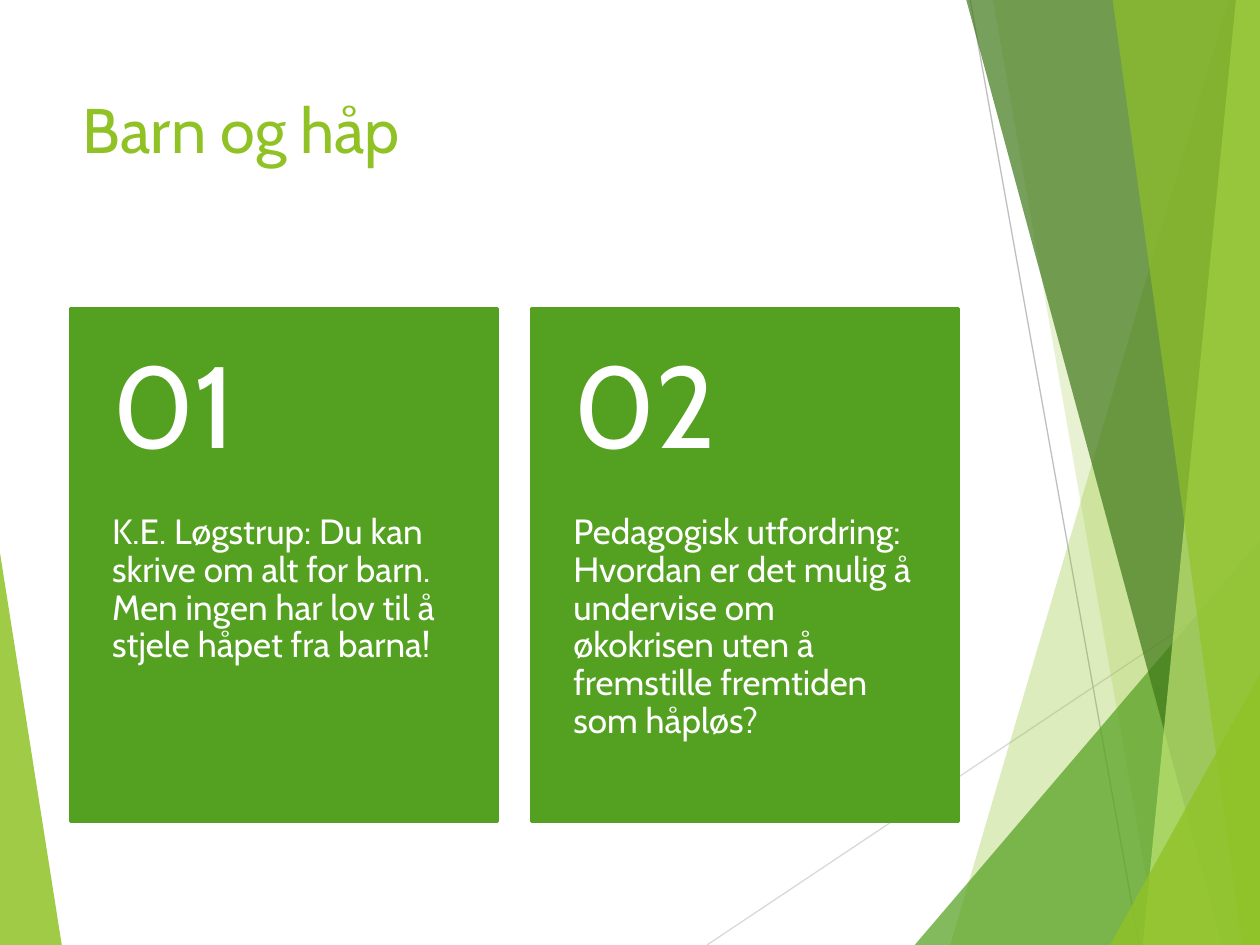
from dataclasses import dataclass

from lxml import etree
from pptx import Presentation
from pptx.dml.color import RGBColor
from pptx.enum.shapes import MSO_CONNECTOR, MSO_SHAPE
from pptx.enum.text import MSO_ANCHOR
from pptx.oxml.ns import qn
from pptx.util import Pt

STRAIGHT = MSO_CONNECTOR.STRAIGHT
RECTANGLE = MSO_SHAPE.RECTANGLE
TOP, MIDDLE = MSO_ANCHOR.TOP, MSO_ANCHOR.MIDDLE

WIDTH, HEIGHT = 720, 540
FONT = "Cabin"
LIME, GREEN, WHITE = "90C226", "54A021", "FFFFFF"

MARGIN = 40.3
CARD_TOP, CARD_WIDTH, CARD_HEIGHT = 176.4, 244.1, 293
CARD_STEP = 263.5
NUMBER_HEIGHT = 117.4
CARD_SPACING = 0.9


@dataclass
class Facet:
    points: tuple[tuple[float, float], ...]
    color: str
    opacity: int


@dataclass
class Ray:
    start: tuple[float, float]
    end: tuple[float, float]
    color: str


@dataclass
class Card:
    number: str
    message: str


@dataclass
class TextStyle:
    size: float
    color: str
    anchor: MSO_ANCHOR = TOP
    insets: tuple[float, float, float, float] = (7.2, 3.6, 7.2, 3.6)
    spacing: float = 1.0


def band(top_x: float, bottom_x: float, color: str, opacity: int) -> Facet:
    """Full-height facet from a slanted edge to the right side of the slide."""
    corners = ((top_x, 0), (bottom_x, HEIGHT), (WIDTH, HEIGHT), (WIDTH, 0))
    return Facet(corners, color, opacity)


def corner(bottom_x: float, right_y: float, color: str, opacity: int) -> Facet:
    """Triangle in the bottom right corner."""
    corners = ((bottom_x, HEIGHT), (WIDTH, right_y), (WIDTH, HEIGHT))
    return Facet(corners, color, opacity)


LEFT_FACET = Facet(((0, 316), (35.3, HEIGHT), (0, HEIGHT)), LIME, 85)
RAYS = (
    Ray((404, HEIGHT), (WIDTH, 329), "D9D9D9"),
    Ray((554.4, 0), (651, HEIGHT), "BFBFBF"),
)
RIGHT_FACETS = (
    band(702, 543, LIME, 30),
    band(567.4, 661.7, LIME, 20),
    corner(522.7, 309, GREEN, 72),
    band(552.2, 698.4, "3F7819", 70),
    band(706.3, 653, "C0E474", 70),
    band(635.8, 710, LIME, 65),
    corner(634.3, 385.2, LIME, 80),
)
CARDS = (
    Card("01", "K.E. Løgstrup: Du kan skrive om alt for barn. "
               "Men ingen har lov til å stjele håpet fra barna!"),
    Card("02", "Pedagogisk utfordring: Hvordan er det mulig å undervise om "
               "økokrisen uten å fremstille fremtiden som håpløs?"),
)
TITLE_STYLE = TextStyle(36, LIME)
NUMBER_STYLE = TextStyle(66, WHITE, MIDDLE, (23.8, 13, 23.8, 13), CARD_SPACING)
MESSAGE_STYLE = TextStyle(20, WHITE, TOP, (23.8, 0, 23.8, 26), CARD_SPACING)


def set_color(color_format, value: str) -> None:
    color_format.rgb = RGBColor.from_string(value)


def draw_facet(shapes, facet: Facet) -> None:
    first, *rest = [(Pt(x), Pt(y)) for x, y in facet.points]
    builder = shapes.build_freeform(*first)
    builder.add_line_segments(rest, close=True)
    outline = builder.convert_to_shape()
    outline.shadow.inherit = False
    outline.line.fill.background()
    outline.fill.solid()
    set_color(outline.fill.fore_color, facet.color)
    fill_color = outline.element.spPr.find(qn("a:solidFill"))[0]
    etree.SubElement(fill_color, qn("a:alpha"), val=str(facet.opacity * 1000))


def draw_ray(shapes, ray: Ray) -> None:
    ends = [Pt(value) for value in (*ray.start, *ray.end)]
    connector = shapes.add_connector(STRAIGHT, *ends)
    connector.line.width = Pt(0.75)
    set_color(connector.line.color, ray.color)
    etree.SubElement(connector.element.spPr, qn("a:effectLst"))


def draw_text(shapes, left: float, top: float, width: float, height: float,
              text: str, style: TextStyle) -> None:
    frame = shapes.add_textbox(Pt(left), Pt(top), Pt(width), Pt(height)).text_frame
    frame.word_wrap = True
    frame.vertical_anchor = style.anchor
    (frame.margin_left, frame.margin_top,
     frame.margin_right, frame.margin_bottom) = map(Pt, style.insets)
    paragraph = frame.paragraphs[0]
    paragraph.line_spacing = style.spacing
    run = paragraph.add_run()
    run.text = text
    run.font.name = FONT
    run.font.size = Pt(style.size)
    set_color(run.font.color, style.color)


def draw_card(shapes, left: float, card: Card) -> None:
    panel = shapes.add_shape(RECTANGLE, Pt(left), Pt(CARD_TOP),
                             Pt(CARD_WIDTH), Pt(CARD_HEIGHT))
    panel.shadow.inherit = False
    panel.fill.solid()
    set_color(panel.fill.fore_color, GREEN)
    set_color(panel.line.color, GREEN)
    panel.line.width = Pt(1.5)
    draw_text(shapes, left, CARD_TOP + NUMBER_HEIGHT, CARD_WIDTH,
              CARD_HEIGHT - NUMBER_HEIGHT, card.message, MESSAGE_STYLE)
    draw_text(shapes, left, CARD_TOP, CARD_WIDTH, NUMBER_HEIGHT,
              card.number, NUMBER_STYLE)


def main() -> None:
    deck = Presentation()
    deck.slide_width, deck.slide_height = Pt(WIDTH), Pt(HEIGHT)
    shapes = deck.slides.add_slide(deck.slide_layouts[6]).shapes

    # Background facets and rays
    draw_facet(shapes, LEFT_FACET)
    for ray in RAYS:
        draw_ray(shapes, ray)
    for facet in RIGHT_FACETS:
        draw_facet(shapes, facet)

    # Title
    draw_text(shapes, MARGIN, 48, 507.6, 104, "Barn og håp", TITLE_STYLE)

    # Numbered cards
    for index, card in enumerate(CARDS):
        draw_card(shapes, MARGIN + index * CARD_STEP, card)

    deck.save("out.pptx")


if __name__ == "__main__":
    main()
